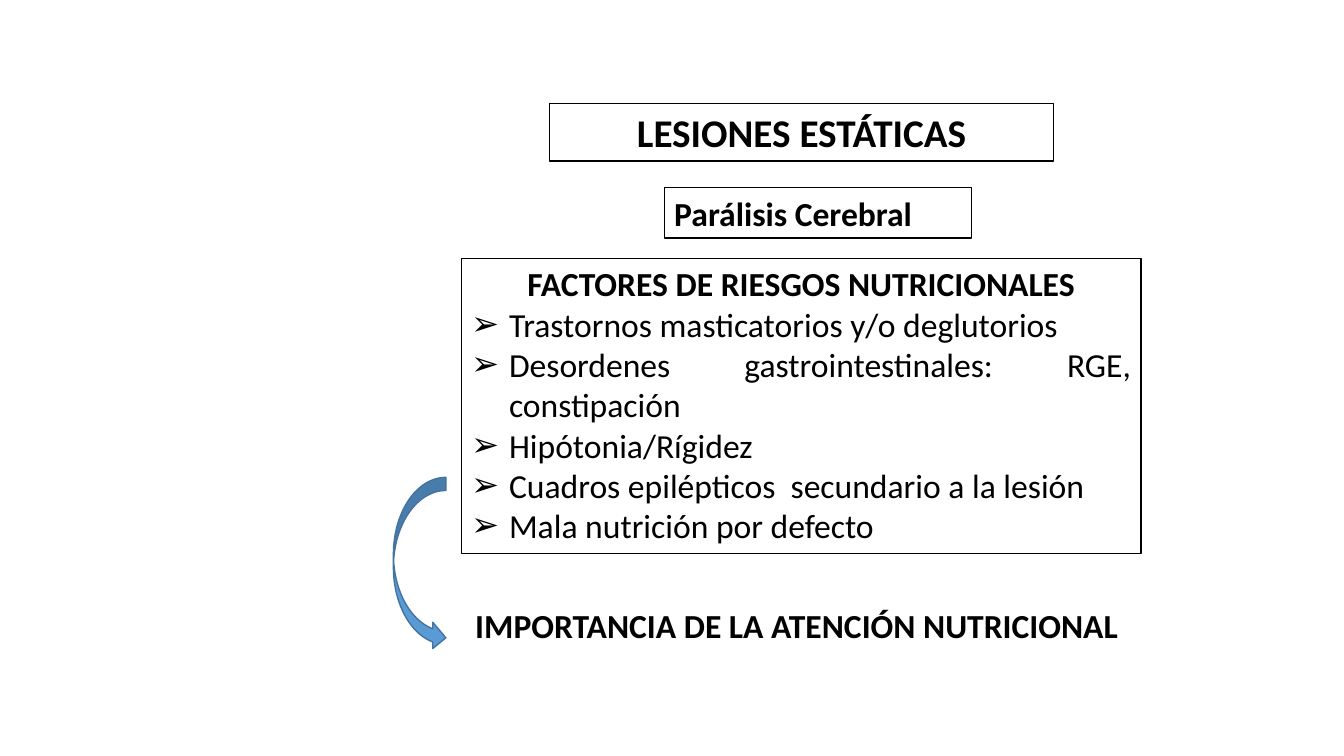
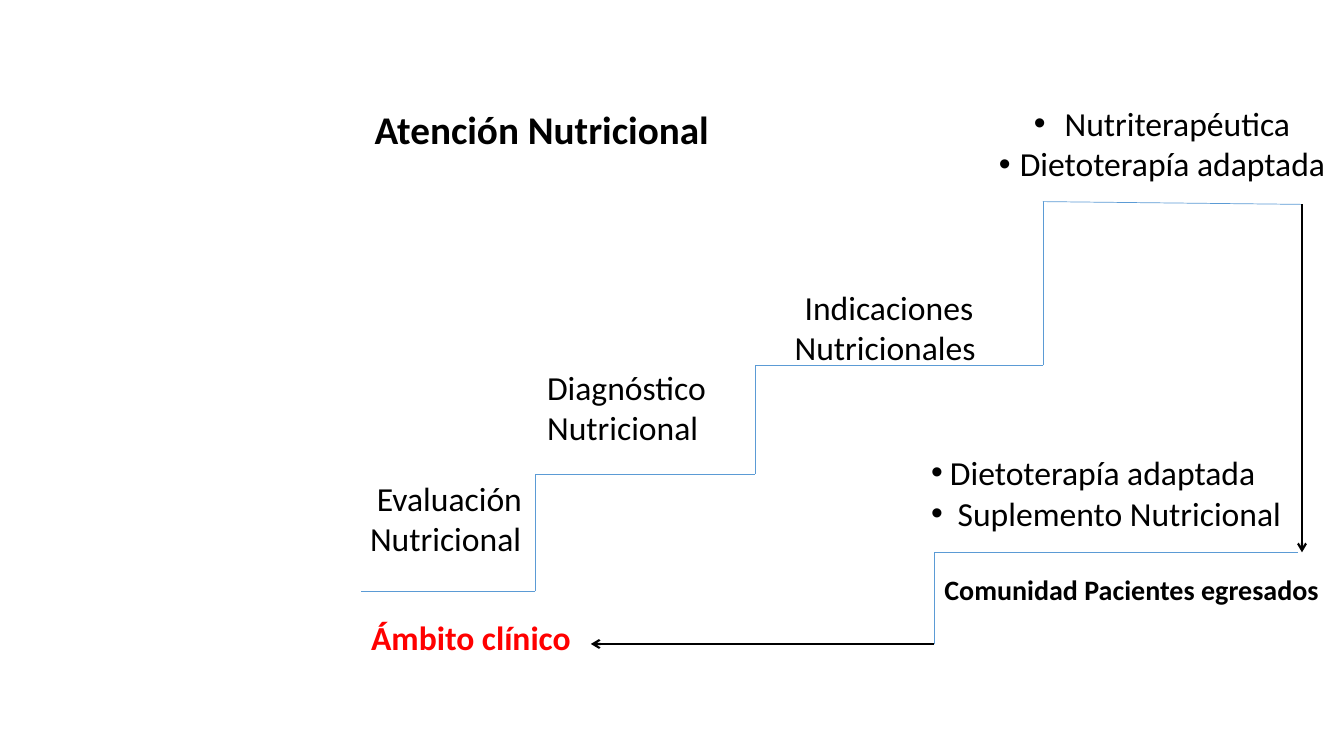
import itertools
import pptx
import pptx.dml.color
import pptx.enum.shapes
import pptx.enum.text
import pptx.oxml
import pptx.oxml.ns
import pptx.util
from lxml import etree

Pt = pptx.util.Pt
ALIGN = pptx.enum.text.PP_ALIGN
ANCHOR = pptx.enum.text.MSO_ANCHOR
SHAPE = pptx.enum.shapes.MSO_SHAPE
LINK = pptx.enum.shapes.MSO_CONNECTOR
FONT = "Calibri"
BLACK, WHITE, RED = "000000", "FFFFFF", "FF0000"
BLUE, NAVY = "5B9BD5", "43739E"
TITLE, BODY, SMALL = 28, 24, 20


def paint(target, color):
    target.rgb = pptx.dml.color.RGBColor.from_string(color)


def place(shape, box):
    shape.left, shape.top, shape.width, shape.height = map(Pt, box)


def frame(shape, fill=WHITE, edge=BLACK):
    shape.fill.solid()
    paint(shape.fill.fore_color, fill)
    paint(shape.line.color, edge)
    shape.line.width = Pt(1)


def style(par, size=BODY, bold=False, color=BLACK, align=ALIGN.LEFT):
    par.alignment = align
    for run in par.runs:
        font = run.font
        font.name, font.size, font.bold = FONT, Pt(size), bold
        paint(font.color, color)


def bullet(par, mark, indent):
    props = par._p.get_or_add_pPr()
    props.set("marL", str(Pt(indent)))
    props.set("indent", str(-Pt(indent)))
    face = etree.SubElement(props, pptx.oxml.ns.qn("a:buFont"))
    face.set("typeface", "Arial")
    char = etree.SubElement(props, pptx.oxml.ns.qn("a:buChar"))
    char.set("char", mark)


def title(slide, text, box):
    shape = slide.shapes.title
    place(shape, box)
    body = shape.text_frame
    body.text = text
    body.auto_size = pptx.enum.text.MSO_AUTO_SIZE.NONE
    body.vertical_anchor = ANCHOR.TOP
    style(body.paragraphs[0], TITLE, True, align=ALIGN.CENTER)
    return shape


def label(slide, text, box, **look):
    shape = slide.shapes.add_textbox(*map(Pt, box))
    body = shape.text_frame
    body.word_wrap = True
    body.text = text
    for par in body.paragraphs:
        style(par, **look)
    return shape


def points(slide, text, box, indents, mark="•", **look):
    shape = label(slide, text, box, **look)
    for par, indent in zip(shape.text_frame.paragraphs, indents):
        if indent:
            bullet(par, mark, indent)
    return shape


def line(slide, start, end, color=BLUE, width=0.5):
    link = slide.shapes.add_connector(LINK.STRAIGHT, *map(Pt, start + end))
    paint(link.line.color, color)
    link.line.width = Pt(width)
    etree.SubElement(link._element.spPr, pptx.oxml.ns.qn("a:effectLst"))
    return link


def arrow(slide, start, end):
    link = line(slide, start, end, BLACK, 1.5)
    tail = etree.SubElement(link.line._get_or_add_ln(), pptx.oxml.ns.qn("a:tailEnd"))
    tail.set("type", "arrow")


def stairs(slide, corners):
    for start, end in itertools.pairwise(corners):
        line(slide, start, end)


def risks(slide):
    frame(title(slide, "LESIONES ESTÁTICAS", (392.5, 74, 360, 41)))
    factors = [
        "FACTORES DE RIESGOS NUTRICIONALES",
        "Trastornos masticatorios y/o deglutorios",
        "Desordenes gastrointestinales: RGE, constipación",
        "Hipótonia/Rígidez",
        "Cuadros epilépticos  secundario a la lesión",
        "Mala nutrición por defecto",
    ]
    indents = [0] + [27] * (len(factors) - 1)
    card = points(slide, "\n".join(factors), (329.5, 184.5, 485.5, 211),
                  indents, "➢", align=ALIGN.JUSTIFY)
    style(card.text_frame.paragraphs[0], bold=True, align=ALIGN.CENTER)
    frame(card)
    frame(label(slide, "Parálisis Cerebral", (474.5, 134, 219.5, 36), bold=True))
    label(slide, "IMPORTANCIA DE LA ATENCIÓN NUTRICIONAL", (326, 428.5, 486, 36),
          bold=True, align=ALIGN.CENTER)
    curve = slide.shapes.add_shape(SHAPE.CURVED_RIGHT_ARROW,
                                   *map(Pt, (281, 341, 37.5, 124)))
    curve.shadow.inherit = False
    frame(curve, BLUE, NAVY)


def care(slide):
    title(slide, "Atención Nutricional", (257, 71.5, 260, 41))
    top, foot = (930, 146), (667.5, 460)
    stairs(slide, [(258, 422.5), (382.5, 422.5), (382.5, 338.5), (539.5, 338.5),
                   (539.5, 261), (745, 261), (745, 144), top])
    stairs(slide, [(927, 394.5), (667.5, 394.5), foot])
    arrow(slide, top, (930, 394.5))
    arrow(slide, foot, (422, 460))
    steps = [
        ("Evaluación Nutricional ", (238.5, 337.5, 165, 65.5)),
        ("Diagnóstico Nutricional ", (376.5, 258.5, 142, 65.5)),
        ("Indicaciones Nutricionales ", (539.5, 201.5, 191, 65.5)),
    ]
    for text, box in steps:
        label(slide, text, box, align=ALIGN.CENTER)
    points(slide, "Nutriterapéutica\nDietoterapía adaptada", (702, 70, 256, 65.5),
           (22, 15), align=ALIGN.CENTER)
    points(slide, "Dietoterapía adaptada\nSuplemento Nutricional",
           (658, 319.5, 266, 65.5), (13.5, 19))
    label(slide, "Ámbito clínico", (258, 437, 174, 36), bold=True, color=RED)
    label(slide, "Comunidad Pacientes egresados", (667.5, 405.5, 289.5, 31.5),
          size=SMALL, bold=True)


def main():
    deck = pptx.Presentation()
    deck.slide_width, deck.slide_height = Pt(960), Pt(540)
    for build in (risks, care):
        build(deck.slides.add_slide(deck.slide_layouts[5]))
    deck.save("out.pptx")


if __name__ == "__main__":
    main()
